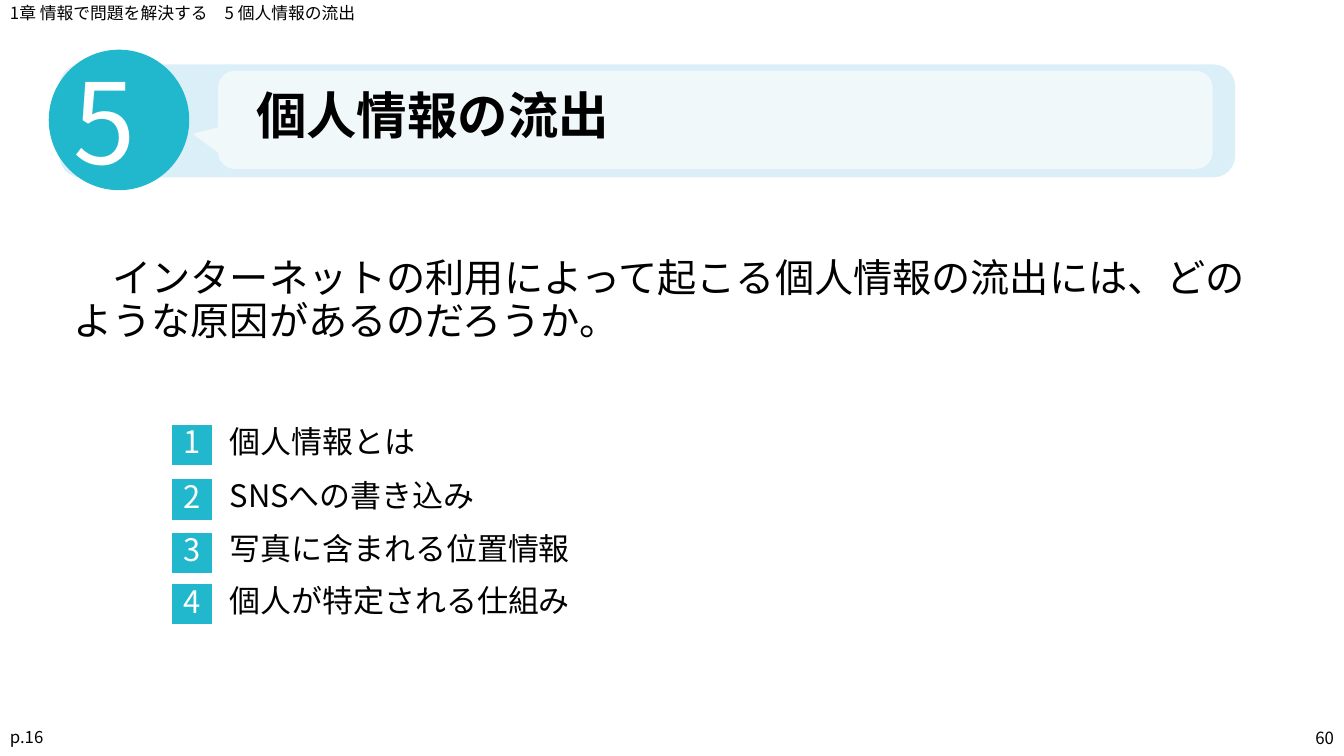
from lxml.etree import SubElement
from pptx import Presentation
from pptx.dml.color import RGBColor
from pptx.enum.shapes import MSO_SHAPE
from pptx.enum.text import MSO_ANCHOR, PP_ALIGN
from pptx.oxml.ns import qn
from pptx.util import Pt

PX = 9144  # 100 px to the inch


class Theme:
    font = "Noto Sans CJK JP"
    black = RGBColor.from_string("000000")
    white = RGBColor.from_string("FFFFFF")
    teal = RGBColor.from_string("21B8CE")
    band = RGBColor.from_string("DBEFF8")
    callout = RGBColor.from_string("F0F8FA")
    small, item, question, title, number = 12, 22.15, 28, 36, 80


presentation = Presentation()
presentation.slide_width = 1333 * PX
presentation.slide_height = 750 * PX
slide = presentation.slides.add_slide(presentation.slide_layouts[6])


def add_panel(kind, box, color, line_width):
    shape = slide.shapes.add_shape(kind, *(value * PX for value in box))
    shape.shadow.inherit = False
    shape.fill.solid()
    shape.fill.fore_color.rgb = color
    shape.line.color.rgb = color
    shape.line.width = Pt(line_width)
    return shape


def write(shape, text, size, color=Theme.black, spacing=0.9,
          anchor=MSO_ANCHOR.TOP, align=PP_ALIGN.LEFT):
    text_frame = shape.text_frame
    text_frame.word_wrap = True
    text_frame.vertical_anchor = anchor
    text_frame.text = text
    paragraph = text_frame.paragraphs[0]
    paragraph.alignment = align
    paragraph.line_spacing = spacing
    run = paragraph.runs[0]
    run.font.name = Theme.font
    run.font.size = Pt(size)
    run.font.color.rgb = color
    # East Asian characters need their own typeface element
    SubElement(run._r.get_or_add_rPr(), qn("a:ea")).set("typeface", Theme.font)
    return run


# Heading band, callout and number circle
add_panel(MSO_SHAPE.ROUNDED_RECTANGLE, (63, 68, 1158, 104), Theme.band, 5.75)
callout = add_panel(MSO_SHAPE.ROUNDED_RECTANGULAR_CALLOUT,
                    (217, 71, 985, 96), Theme.callout, 1)
callout.adjustments[0] = -0.525
callout.adjustments[1] = 0.147
add_panel(MSO_SHAPE.OVAL, (49, 50, 138, 138), Theme.teal, 1)

# Heading text
title_box = slide.shapes.add_textbox(254 * PX, 77 * PX, 957 * PX, 81 * PX)
title_run = write(title_box, "個人情報の流出", Theme.title, anchor=MSO_ANCHOR.MIDDLE)
title_run.font.bold = True
title_frame = title_box.text_frame
title_frame.margin_left = title_frame.margin_right = 0
title_frame.margin_top = title_frame.margin_bottom = 0

# Section number
number_box = slide.shapes.add_textbox(63 * PX, 74 * PX, 107 * PX, 106 * PX)
number_run = write(number_box, "5", Theme.number, Theme.white, anchor=MSO_ANCHOR.MIDDLE)
number_run._r.get_or_add_rPr().set("spc", "-300")

# Question, header and footer
texts = [
    ((63, 252, 1207, 138),
     "　インターネットの利用によって起こる個人情報の流出には、どのような原因があるのだろうか。",
     Theme.question, {}),
    ((0, 0, 959, 28), "1章 情報で問題を解決する　5 個人情報の流出", Theme.small, {}),
    ((0, 716, 440, 33), "p.16", Theme.small, {"anchor": MSO_ANCHOR.MIDDLE}),
    ((1033, 715, 300, 33), "60", Theme.small,
     {"anchor": MSO_ANCHOR.MIDDLE, "align": PP_ALIGN.RIGHT, "spacing": 1.0}),
]
for box, text, size, options in texts:
    text_box = slide.shapes.add_textbox(*(value * PX for value in box))
    write(text_box, text, size, **options)

# Numbered topics
topics = [
    (421, "個人情報とは"),
    (475, "SNSへの書き込み"),
    (528, "写真に含まれる位置情報"),
    (579, "個人が特定される仕組み"),
]
for number, (top, topic) in enumerate(topics, start=1):
    badge = add_panel(MSO_SHAPE.RECTANGLE, (171, top + 1, 39, 39), Theme.teal, 0.75)
    write(badge, str(number), Theme.item, Theme.white, 0.8,
          MSO_ANCHOR.MIDDLE, PP_ALIGN.CENTER)
    text_box = slide.shapes.add_textbox(218 * PX, top * PX, 868 * PX, 43 * PX)
    write(text_box, topic, Theme.item, spacing=0.8)

presentation.save("out.pptx")
